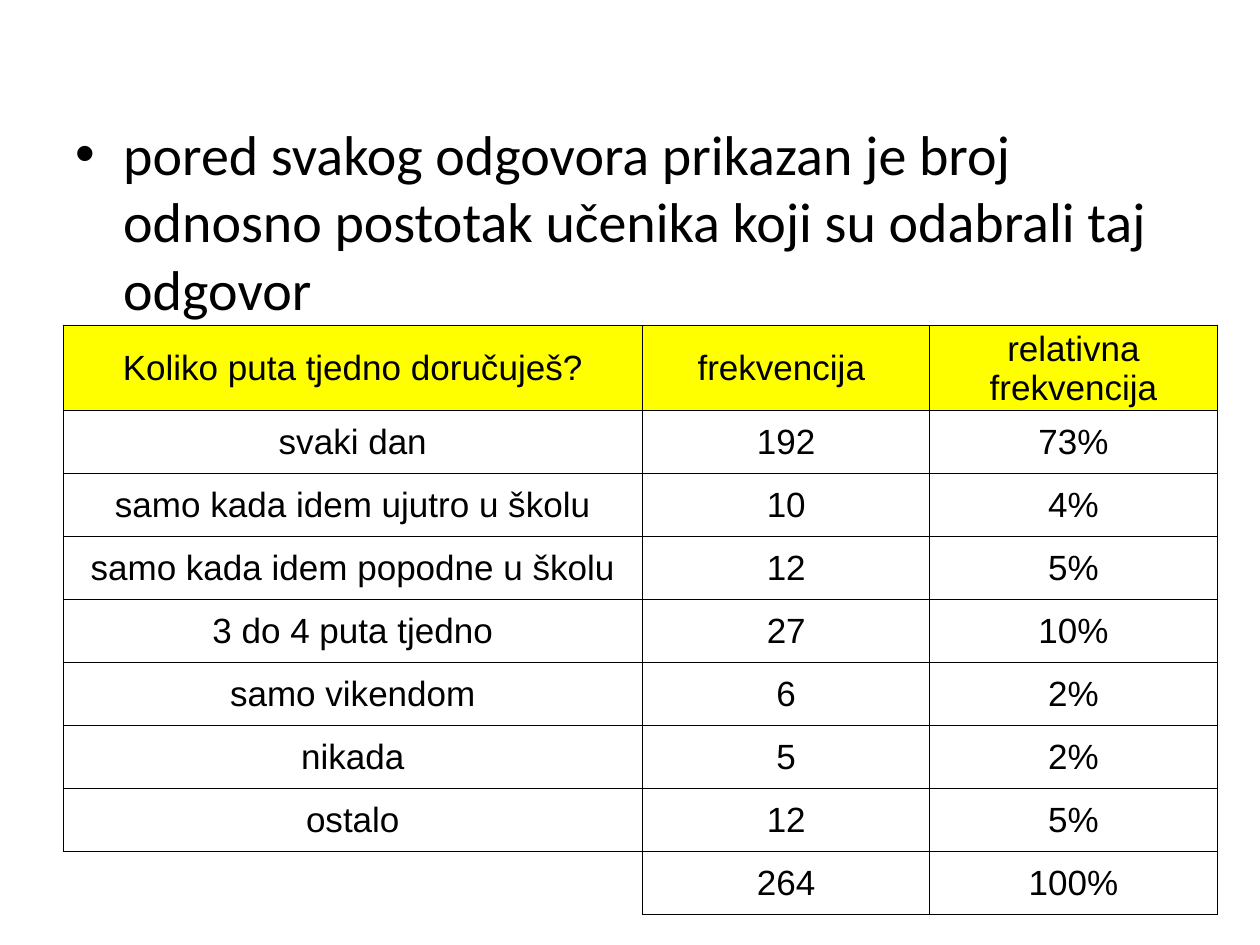
from lxml.etree import SubElement
from pptx import Presentation
from pptx.dml.color import RGBColor
from pptx.enum.text import MSO_ANCHOR, PP_ALIGN
from pptx.oxml.ns import qn
from pptx.util import Inches, Pt

COLORS = {"text": "000000", "line": "000000", "head": "FFFF00"}
WIDTHS = [4.6, 2.28, 2.28]
ROW = 0.5
ROWS = [
    ("Koliko puta tjedno doručuješ?", "frekvencija ", "relativna frekvencija"),
    ("svaki dan", "192", "73%"),
    ("samo kada idem ujutro u školu", "10", "4%"),
    ("samo kada idem popodne u školu", "12", "5%"),
    ("3 do 4 puta tjedno", "27", "10%"),
    ("samo vikendom", "6", "2%"),
    ("nikada", "5", "2%"),
    ("ostalo", "12", "5%"),
    ("", "264", "100%"),
]


def add_run(para, text, font, size):
    run = para.add_run()
    run.text = text
    run.font.name = font
    run.font.size = Pt(size)
    run.font.color.rgb = RGBColor.from_string(COLORS["text"])


def add_bullet(slide, text):
    box = slide.shapes.add_textbox(Inches(0.5), Inches(0.25), Inches(9), Inches(2.33))
    frame = box.text_frame
    frame.word_wrap = True
    frame.margin_top = Inches(0.7)
    para = frame.paragraphs[0]
    add_run(para, text, "Calibri", 32)
    # Hanging indent with a round bullet
    props = para._p.get_or_add_pPr()
    props.set("marL", str(Inches(0.38)))
    props.set("indent", str(-Inches(0.38)))
    SubElement(props, qn("a:buFont"), typeface="Arial")
    SubElement(props, qn("a:buChar"), char="•")


def set_edges(cell, shown):
    props = cell._tc.get_or_add_tcPr()
    for side in "LRTB":
        line = SubElement(props, qn(f"a:ln{side}"), w=str(Pt(0.5)))
        if side in shown:
            fill = SubElement(line, qn("a:solidFill"))
            SubElement(fill, qn("a:srgbClr"), val=COLORS["line"])
        else:
            SubElement(line, qn("a:noFill"))


def fill_cell(cell, text, head):
    # The empty corner is open to the left and below
    set_edges(cell, "LRTB" if text else "RT")
    if head:
        cell.fill.solid()
        cell.fill.fore_color.rgb = RGBColor.from_string(COLORS["head"])
    else:
        cell.fill.background()
    cell.vertical_anchor = MSO_ANCHOR.MIDDLE
    cell.margin_left = cell.margin_right = cell.margin_top = Inches(0.01)
    cell.margin_bottom = 0
    if text:
        para = cell.text_frame.paragraphs[0]
        para.alignment = PP_ALIGN.CENTER
        add_run(para, text, "Arial", 20)


def add_grid(slide):
    table = slide.shapes.add_table(
        len(ROWS), len(WIDTHS), Inches(0.5), Inches(2.58),
        Inches(sum(WIDTHS)), Inches(ROW * len(ROWS))).table
    table.first_row = table.horz_banding = False
    for col, width in zip(table.columns, WIDTHS):
        col.width = Inches(width)
    for r, texts in enumerate(ROWS):
        table.rows[r].height = Inches(ROW)
        for c, text in enumerate(texts):
            fill_cell(table.cell(r, c), text, head=r == 0)


def main():
    deck = Presentation()
    deck.slide_width, deck.slide_height = Inches(10), Inches(7.5)
    slide = deck.slides.add_slide(deck.slide_layouts[6])
    # Explanation
    add_bullet(slide, "pored svakog odgovora prikazan je broj odnosno "
                      "postotak učenika koji su odabrali taj odgovor")
    # Frequency table
    add_grid(slide)
    deck.save("out.pptx")


if __name__ == "__main__":
    main()
